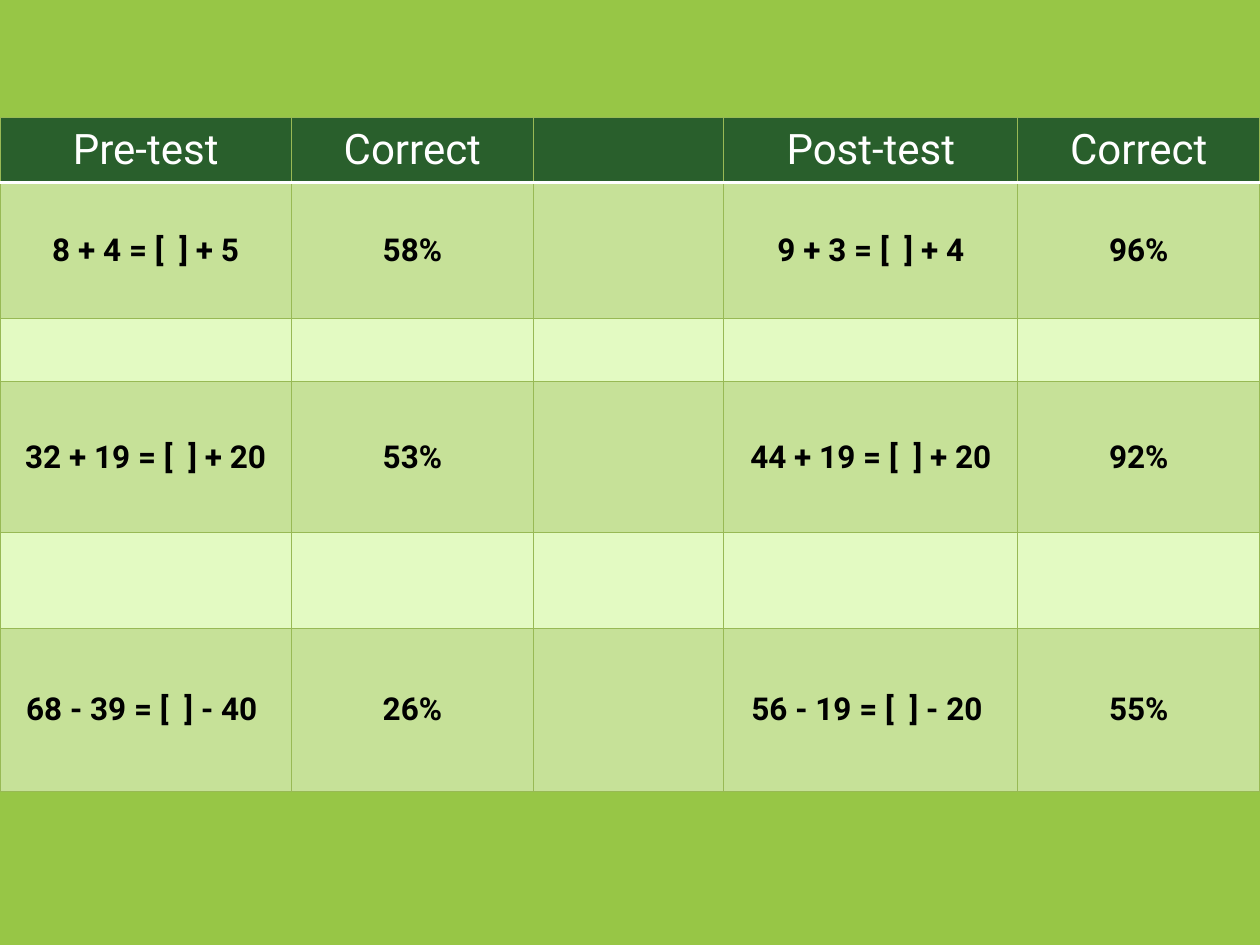
from lxml import etree
from pptx import Presentation
from pptx.dml.color import RGBColor
from pptx.enum import shapes, text
from pptx.oxml.ns import qn
from pptx.util import Inches, Pt

COLORS = {"back": "97C646", "head": "295F2C", "band": "C6E198", "plain": "E3FAC2",
          "line": "98B955", "white": "FFFFFF", "ink": "000000"}
COLS = [2.31, 1.92, 1.51, 2.33, 1.92]
ROWS = [0.52, 1.08, 0.5, 1.2, 0.76, 1.29]
DATA = [
    ["Pre-test", "Correct", "", "Post-test", "Correct"],
    ["8 + 4 = [  ] + 5", "58%", "", "9 + 3 = [  ] + 4", "96%"],
    [""] * 5,
    ["32 + 19 = [  ] + 20", "53%", "", "44 + 19 = [  ] + 20", "92%"],
    [""] * 5,
    ["68 - 39 = [  ] - 40 ", "26%", "", "56 - 19 = [  ] - 20 ", "55%"],
]


def rgb(name):
    return RGBColor.from_string(COLORS[name])


def add_back(slide, left, top, width, height):
    back = slide.shapes.add_shape(shapes.MSO_SHAPE.RECTANGLE, left, top, width, height)
    back.shadow.inherit = False
    back.fill.solid()
    back.fill.fore_color.rgb = rgb("back")
    back.line.fill.background()


def set_edge(cell, index, side, color, width):
    line = etree.Element(qn(f"a:ln{side}"), w=str(Pt(width)))
    fill = etree.SubElement(line, qn("a:solidFill"))
    etree.SubElement(fill, qn("a:srgbClr"), val=COLORS[color])
    cell._tc.get_or_add_tcPr().insert(index, line)


def style_cell(cell, words, row):
    head = row == 0
    cell.fill.solid()
    cell.fill.fore_color.rgb = rgb("head" if head else "band" if row % 2 else "plain")

    # The rule under the header is shared by the first two rows
    for index, side in enumerate("LRTB"):
        rule = (row, side) in ((0, "B"), (1, "T"))
        set_edge(cell, index, side, "white" if rule else "line", 2 if rule else 0.75)

    cell.margin_left = cell.margin_right = Inches(0.06)
    cell.margin_top = cell.margin_bottom = Inches(0.06)
    cell.vertical_anchor = text.MSO_ANCHOR.MIDDLE
    if words:
        cell.text = words
        para = cell.text_frame.paragraphs[0]
        para.alignment = text.PP_ALIGN.CENTER
        para.font.name = "Roboto"
        para.font.size = Pt(24 if head else 18)
        para.font.bold = not head
        para.font.color.rgb = rgb("white" if head else "ink")


def add_scores(slide, left, top, width, height):
    table = slide.shapes.add_table(len(ROWS), len(COLS), left, top, width, height).table
    for column, size in zip(table.columns, COLS):
        column.width = int(width * size / sum(COLS))
    for line, size in zip(table.rows, ROWS):
        line.height = int(height * size / sum(ROWS))
    for row, values in enumerate(DATA):
        for col, words in enumerate(values):
            style_cell(table.cell(row, col), words, row)


def main():
    deck = Presentation()
    deck.slide_width, deck.slide_height = Inches(10), Inches(7.5)
    slide = deck.slides.add_slide(deck.slide_layouts[6])
    add_back(slide, 0, 0, deck.slide_width, deck.slide_height)
    add_scores(slide, 0, Inches(0.93), Inches(10), Inches(5.35))
    deck.save("out.pptx")


if __name__ == "__main__":
    main()
